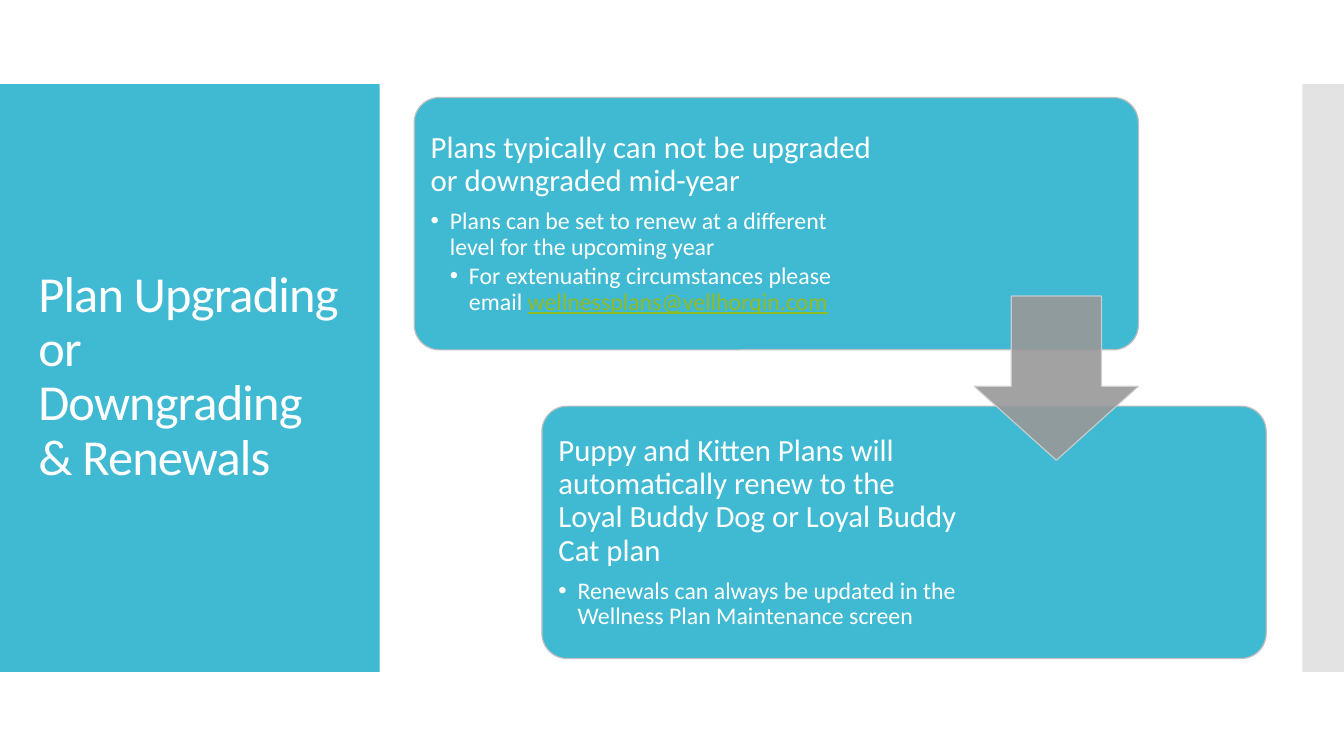
"""Builds the slide on upgrading, downgrading and renewing plans."""
from dataclasses import dataclass

from lxml.etree import SubElement
from pptx import Presentation
from pptx.dml.color import RGBColor
from pptx.enum.shapes import MSO_SHAPE
from pptx.enum.text import MSO_ANCHOR, MSO_AUTO_SIZE, PP_ALIGN
from pptx.oxml.ns import qn
from pptx.util import Inches, Pt


@dataclass(frozen=True)
class Theme:
    """Colours and type sizes of the slide."""
    font: str = "Calibri"
    text: str = "FFFFFF"
    email: str = "90BB23"
    panel: str = "40BAD2"
    panel_line: str = "BFBFBF"
    strip: str = "C8C8C8"
    arrow: str = "989898"
    arrow_line: str = "D1D1D1"
    title_size: float = 36
    heading_size: float = 22
    detail_size: float = 17
    line_width: float = 0.85


@dataclass(frozen=True)
class Box:
    """An area on a grid of 160 columns and 90 rows."""
    col: float
    row: float
    cols: float
    rows: float

    def lengths(self) -> tuple[int, int, int, int]:
        """Left, top, width and height of the area."""
        return tuple(Inches(n / 12) for n in (self.col, self.row, self.cols, self.rows))


@dataclass(frozen=True)
class Point:
    """One paragraph of a card, with an optional address at its end."""
    text: str
    level: int = 0
    email: str = ""


@dataclass(frozen=True)
class Card:
    """One step of the process."""
    text_cols: float
    points: tuple[Point, ...]


THEME = Theme()
CARD_COL, CARD_ROW, CARD_COLS, CARD_ROWS = 49.3, 11.6, 86.2, 30.05
STEP_COLS, STEP_ROWS = 15.2, 36.75
TEXT_INSET = 0.88
ARROW_SIDE = 19.55
CARDS = (
    Card(55.2, (
        Point("Plans typically can not be upgraded or downgraded mid-year"),
        Point("Plans can be set to renew at a different level for the upcoming year", 1),
        Point("For extenuating circumstances please email ", 2, "wellnessplans@vellhorqin.com"),
    )),
    Card(49.65, (
        Point("Puppy and Kitten Plans will automatically renew to the "
              "Loyal Buddy Dog or Loyal Buddy Cat plan"),
        Point("Renewals can always be updated in the Wellness Plan Maintenance screen", 1),
    )),
)


def place(shape, box: Box) -> None:
    """Move a shape or placeholder to its area."""
    shape.left, shape.top, shape.width, shape.height = box.lengths()


def paint(color_format, color: str, opacity: int = 100) -> None:
    """Set a colour and its opacity in percent on a solid fill."""
    color_format.fore_color.rgb = RGBColor.from_string(color)
    if opacity < 100:
        for node in color_format._xPr.iter(qn("a:srgbClr")):
            SubElement(node, qn("a:alpha")).set("val", str(opacity * 1000))


def add_block(slide, kind: MSO_SHAPE, box: Box, fill: str, opacity: int = 100,
              line: str = "", line_opacity: int = 100, adjust: tuple[float, ...] = ()):
    """Add a filled preset shape."""
    block = slide.shapes.add_shape(kind, *box.lengths())
    block.shadow.inherit = False
    for index, value in enumerate(adjust):
        block.adjustments[index] = value
    block.fill.solid()
    paint(block.fill, fill, opacity)
    if line:
        block.line.width = Pt(THEME.line_width)
        block.line.fill.solid()
        paint(block.line.fill, line, line_opacity)
    else:
        block.line.fill.background()
    return block


def style_paragraph(paragraph, size: float) -> None:
    """Apply the shared font and line spacing."""
    paragraph.alignment = PP_ALIGN.LEFT
    paragraph.line_spacing = 0.9
    paragraph.space_before = Pt(0)
    paragraph.font.name = THEME.font
    paragraph.font.size = Pt(size)
    paragraph.font.color.rgb = RGBColor.from_string(THEME.text)


def prepare_frame(frame) -> None:
    """Wrap and centre text vertically without resizing."""
    frame.word_wrap = True
    frame.auto_size = MSO_AUTO_SIZE.NONE
    frame.vertical_anchor = MSO_ANCHOR.MIDDLE


def write_point(paragraph, point: Point) -> None:
    """Write one heading or bulleted detail."""
    size = THEME.detail_size if point.level else THEME.heading_size
    style_paragraph(paragraph, size)
    paragraph.level = point.level
    paragraph.space_after = Pt(round(size * (0.15 if point.level else 0.35), 2))
    properties = paragraph._p.get_or_add_pPr()
    properties.set("marL", str(Inches(0.19 * point.level)))
    properties.set("indent", str(Inches(-0.19 if point.level else 0)))
    bullet = properties.makeelement(qn("a:buChar" if point.level else "a:buNone"))
    if point.level:
        bullet.set("char", "•")
    properties.insert(list(properties).index(properties.find(qn("a:defRPr"))), bullet)
    paragraph.add_run().text = point.text
    if point.email:
        address = paragraph.add_run()
        address.text = point.email
        address.font.underline = True
        address.font.color.rgb = RGBColor.from_string(THEME.email)


def write_title(title) -> None:
    """Write the title on the left panel."""
    place(title, Box(3.36, 14.75, 38.65, 60.35))
    prepare_frame(title.text_frame)
    heading = title.text_frame.paragraphs[0]
    heading.text = "Plan Upgrading or Downgrading & Renewals"
    style_paragraph(heading, THEME.title_size)
    heading.runs[0]._r.get_or_add_rPr().set("spc", "-60")


def add_card(slide, card: Card, index: int, body) -> None:
    """Draw a card and put its list on top."""
    col, row = CARD_COL + index * STEP_COLS, CARD_ROW + index * STEP_ROWS
    panel = add_block(slide, MSO_SHAPE.ROUNDED_RECTANGLE, Box(col, row, CARD_COLS, CARD_ROWS),
                      THEME.panel, line=THEME.panel_line, adjust=(0.1,))
    panel._element.addnext(body._element)
    place(body, Box(col + TEXT_INSET, row + TEXT_INSET, card.text_cols,
                    CARD_ROWS - 2 * TEXT_INSET))
    frame = body.text_frame
    prepare_frame(frame)
    frame.margin_left = frame.margin_right = Inches(0.09)
    frame.margin_top = frame.margin_bottom = Inches(0.09)
    for number, point in enumerate(card.points):
        write_point(frame.add_paragraph() if number else frame.paragraphs[0], point)


def main() -> None:
    """Build and save the slide."""
    deck = Presentation()
    deck.slide_width, deck.slide_height = Inches(13.33), Inches(7.5)
    slide = deck.slides.add_slide(deck.slide_layouts[3])
    title, *bodies = slide.placeholders
    add_block(slide, MSO_SHAPE.RECTANGLE, Box(0, 10, 45.2, 70), THEME.panel)
    strip = add_block(slide, MSO_SHAPE.RECTANGLE, Box(155, 10, 5, 70), THEME.strip, 50)
    strip._element.addnext(title._element)
    write_title(title)
    for index, (card, body) in enumerate(zip(CARDS, bodies)):
        add_card(slide, card, index, body)
    arrow_col = CARD_COL + CARD_COLS - ARROW_SIDE
    add_block(slide, MSO_SHAPE.DOWN_ARROW, Box(arrow_col, 35.25, ARROW_SIDE, ARROW_SIDE),
              THEME.arrow, 90, THEME.arrow_line, 90, (0.55, 0.45))
    deck.save("out.pptx")


if __name__ == "__main__":
    main()
